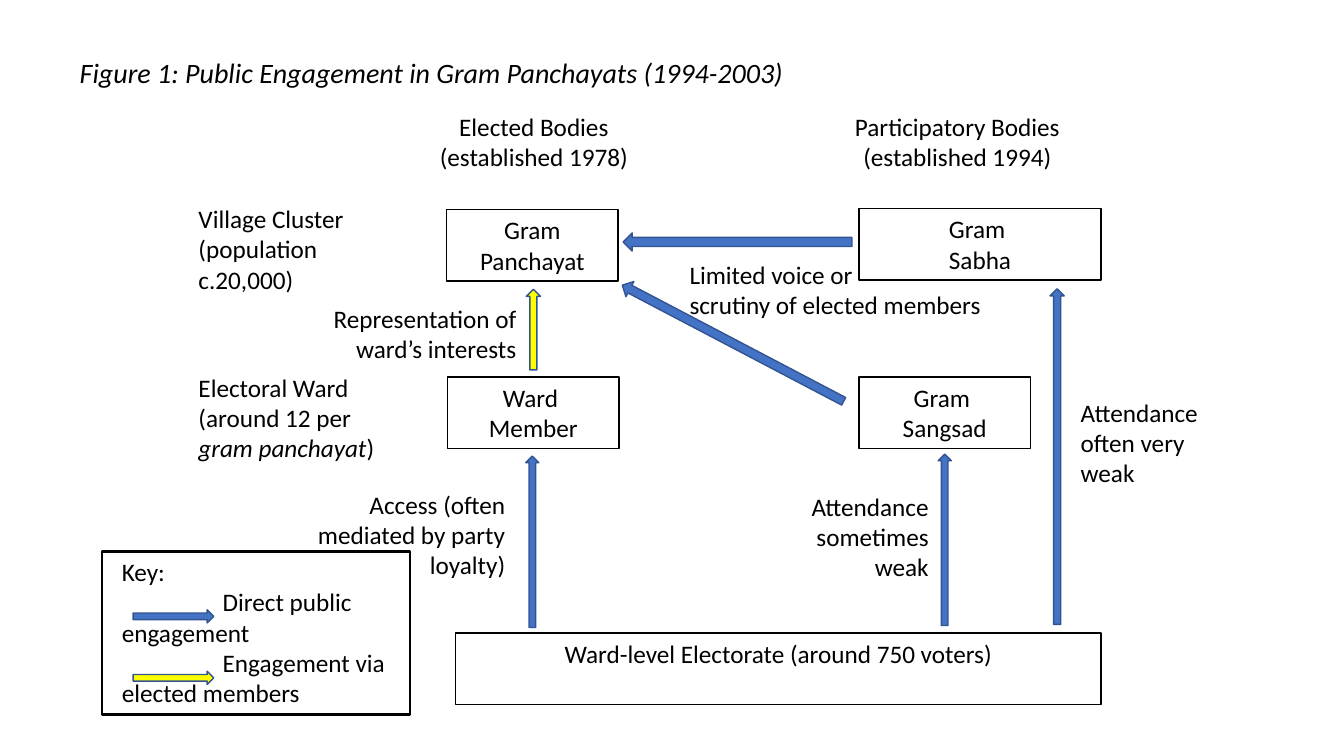
from lxml import etree
from pptx import Presentation
from pptx.dml.color import RGBColor
from pptx.enum.shapes import MSO_SHAPE as SHAPE
from pptx.enum.text import MSO_ANCHOR, MSO_AUTO_SIZE, PP_ALIGN as ALIGN
from pptx.oxml.ns import qn
from pptx.util import Inches, Pt

COLORS = {"text": "000000", "direct": "4472C4", "elected": "FFFF00", "edge": "325491"}


def add_text(sp, paragraphs, align=ALIGN.LEFT, size=18):
    """Write paragraphs; each is a string or a list of (text, italic) parts."""
    tf = sp.text_frame
    tf.word_wrap = True
    tf.auto_size = MSO_AUTO_SIZE.NONE
    tf.vertical_anchor = MSO_ANCHOR.TOP
    for i, parts in enumerate(paragraphs):
        p = tf.paragraphs[0] if i == 0 else tf.add_paragraph()
        p.alignment = align
        if isinstance(parts, str):
            p.text = parts
        else:
            for text, italic in parts:
                r = p.add_run()
                r.text = text
                r.font.italic = italic
        for r in p.runs:
            r.font.name = "Calibri"
            r.font.size = Pt(size)
            r.font.color.rgb = RGBColor.from_string(COLORS["text"])


def add_outlined(shapes, kind, box, line, width=1, fill=None):
    """Add a preset shape with an outline and an optional fill."""
    sp = shapes.add_shape(kind, *map(Inches, box))
    sp.shadow.inherit = False
    if fill:
        sp.fill.solid()
        sp.fill.fore_color.rgb = RGBColor.from_string(COLORS[fill])
    else:
        sp.fill.background()
    sp.line.color.rgb = RGBColor.from_string(COLORS[line])
    sp.line.width = Pt(width)
    return sp


prs = Presentation()
prs.slide_width, prs.slide_height = Inches(13.33), Inches(7.5)
slide = prs.slides.add_slide(prs.slide_layouts[5])

# Title
title = slide.shapes.title
title.left, title.top = Inches(0.69), Inches(0.5)
title.width, title.height = Inches(8.29), Inches(0.44)
add_text(title, [[("Figure 1: Public Engagement in Gram Panchayats (1994-2003)", True)]], size=20)

# Institutions and electorate
bodies = [
    (4.43, 2.08, 1.7, ["Gram Panchayat"]),
    (8.52, 2.07, 2.4, ["Gram ", "Sabha"]),
    (4.44, 3.74, 1.7, ["Ward \vMember"]),
    (8.52, 3.74, 1.7, ["Gram ", "Sangsad"]),
    (4.52, 6.28, 6.4, ["Ward-level Electorate (around 750 voters)"]),
]
for left, top, width, paragraphs in bodies:
    sp = add_outlined(slide.shapes, SHAPE.RECTANGLE, (left, top, width, 0.71), "text")
    add_text(sp, paragraphs, ALIGN.CENTER)

# Arrows between the bodies
arrows = [
    ((4.43, 5.31, 1.7, 0.13), 270, "direct"),
    ((4.89, 3.2, 0.8, 0.14), 270, "elected"),
    ((6.03, 3.32, 2.48, 0.17), 207.7, "direct"),
    ((6.18, 2.31, 2.27, 0.18), 180, "direct"),
    ((8.82, 4.46, 3.33, 0.14), 270, "direct"),
    ((8.52, 5.29, 1.7, 0.13), 270, "direct"),
]
for box, rotation, fill in arrows:
    sp = add_outlined(slide.shapes, SHAPE.RIGHT_ARROW, box, "edge", fill=fill)
    sp.rotation = rotation

# Column headings, row labels and arrow labels
ward_label = [("Electoral Ward (around 12 per ", False), ("gram panchayat", True), (")", False)]
labels = [
    ((3.97, 1.05, 2.65, 0.71), "Elected Bodies (established 1978)", ALIGN.CENTER),
    ((8.17, 1.05, 2.65, 0.71), "Participatory Bodies (established 1994)", ALIGN.CENTER),
    ((1.87, 1.97, 2.11, 1.01), "Village Cluster (population c.20,000)", ALIGN.LEFT),
    ((1.87, 3.64, 2.11, 1.01), ward_label, ALIGN.LEFT),
    ((3.19, 2.96, 2.03, 0.71), "Representation of ward’s interests", ALIGN.RIGHT),
    ((2.93, 4.8, 2.18, 1.01), "Access (often mediated by party loyalty)", ALIGN.RIGHT),
    ((6.74, 2.52, 3.19, 0.71), "Limited voice or \vscrutiny of elected members", ALIGN.LEFT),
    ((7.88, 4.82, 1.43, 1.01), "Attendance sometimes weak", ALIGN.RIGHT),
    ((10.62, 3.89, 1.43, 1.01), "Attendance often very weak", ALIGN.LEFT),
]
for box, text, align in labels:
    add_text(slide.shapes.add_textbox(*map(Inches, box)), [text], align)

# Key
key = slide.shapes.add_group_shape().shapes
add_outlined(key, SHAPE.RECTANGLE, (1.01, 5.47, 3.06, 1.62), "text", 1.75)
key_text = key.add_textbox(Inches(1.11), Inches(5.47), Inches(3.32), Inches(1.62))
add_text(key_text, ["Key:", "\tDirect public\vengagement", "\tEngagement via\velected members"])
for p in key_text.text_frame.paragraphs[1:]:
    tabs = etree.SubElement(p._p.get_or_add_pPr(), qn("a:tabLst"))
    etree.SubElement(tabs, qn("a:tab"), pos=str(Inches(1)), algn="l")
for top, fill in ((6.05, "direct"), (6.66, "elected")):
    add_outlined(key, SHAPE.RIGHT_ARROW, (1.32, top, 0.8, 0.13), "edge", fill=fill)

prs.save("out.pptx")
